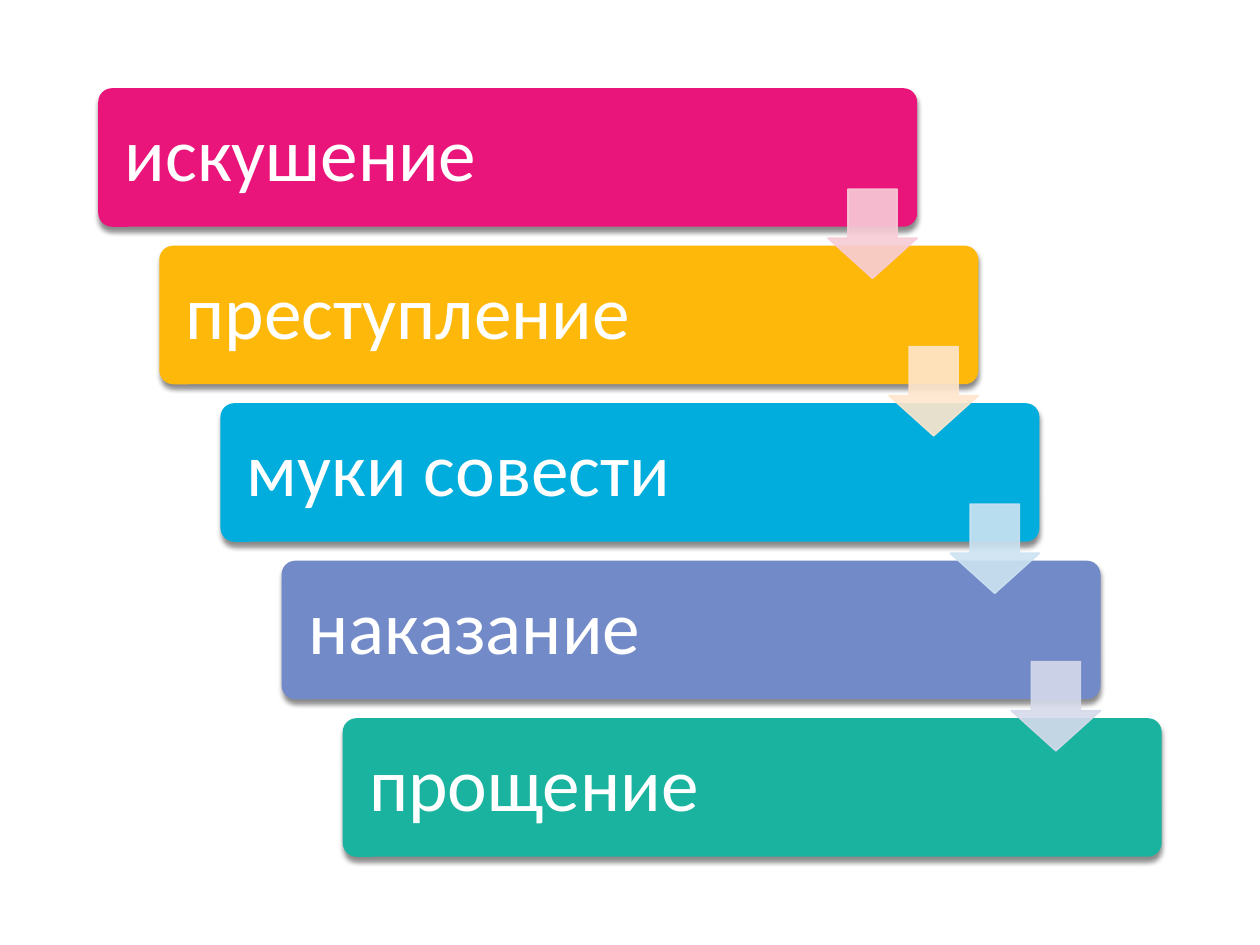
"""Build a slide with five descending steps joined by arrows."""
from lxml import etree
from pptx import Presentation
from pptx.dml.color import RGBColor
from pptx.enum.shapes import MSO_SHAPE
from pptx.enum.text import MSO_ANCHOR, PP_ALIGN
from pptx.oxml.ns import qn
from pptx.util import Inches, Pt

BAR = MSO_SHAPE.ROUNDED_RECTANGLE
ARROW = MSO_SHAPE.DOWN_ARROW
MIDDLE = MSO_ANCHOR.MIDDLE
LEFT = PP_ALIGN.LEFT

COLORS = {
    "pink": "EA157A", "amber": "FEB80A", "cyan": "00ADDC",
    "violet": "738AC8", "teal": "1AB39F",
    "pale pink": "F7CCD7", "pale amber": "FFE6CC",
    "pale cyan": "CCE3F2", "pale violet": "D5DAEB",
    "text": "FFFFFF", "shadow": "000000",
}
STEPS = [
    ("искушение", "pink"),
    ("преступление", "amber"),
    ("муки совести", "cyan"),
    ("наказание", "violet"),
    ("прощение", "teal"),
]
ARROWS = ["pale pink", "pale amber", "pale cyan", "pale violet"]
STEP_X, STEP_Y = 0.485, 1.25
BAR_LEFT, BAR_TOP, BAR_WIDTH, BAR_HEIGHT = 0.78, 0.7, 6.5, 1.1
ARROW_LEFT, ARROW_TOP, ARROW_SIZE = 6.57, 1.5, 0.71
INSET = 0.03
FRAME_FORMAT = {
    "word_wrap": True, "vertical_anchor": MIDDLE,
    "margin_left": Inches(0.18), "margin_right": Inches(0.18),
    "margin_top": Inches(0.18), "margin_bottom": Inches(0.18),
}
PARAGRAPH_FORMAT = {"alignment": LEFT, "line_spacing": 0.9}
FONT_FORMAT = {"name": "Calibri", "size": Pt(43)}


def apply_format(target, values):
    """Set each named attribute on the target."""
    for name, value in values.items():
        setattr(target, name, value)


def color(name):
    """Return the named colour."""
    return RGBColor.from_string(COLORS[name])


def add_alpha(parent, percent):
    """Set the opacity of the colour inside an XML element."""
    for element in parent.iter(qn("a:srgbClr")):
        etree.SubElement(element, qn("a:alpha"), val=str(percent * 1000))


def add_filled_shape(slide, kind, box, fill, adjustments):
    """Add a preset shape with a solid fill and no shadow."""
    shape = slide.shapes.add_shape(kind, *map(Inches, box))
    shape.shadow.inherit = False
    shape.fill.solid()
    shape.fill.fore_color.rgb = color(fill)
    for index, value in enumerate(adjustments):
        shape.adjustments[index] = value
    return shape


def add_shadow(shape):
    """Add a soft shadow below the shape."""
    effects = shape.element.spPr.find(qn("a:effectLst"))
    shadow = etree.SubElement(
        effects, qn("a:outerShdw"), blurRad=str(Pt(3)), dist=str(Pt(2.4)),
        dir="5400000", rotWithShape="0")
    etree.SubElement(shadow, qn("a:srgbClr"), val=COLORS["shadow"])
    add_alpha(shadow, 45)


def add_label(slide, box, text):
    """Add the text of a step."""
    frame = slide.shapes.add_textbox(*map(Inches, box)).text_frame
    apply_format(frame, FRAME_FORMAT)
    paragraph = frame.paragraphs[0]
    apply_format(paragraph, PARAGRAPH_FORMAT)
    run = paragraph.add_run()
    run.text = text
    apply_format(run.font, FONT_FORMAT)
    run.font.color.rgb = color("text")


def add_step(slide, index, text, fill):
    """Add one bar of the staircase with its label."""
    left, top = BAR_LEFT + index * STEP_X, BAR_TOP + index * STEP_Y
    bar = add_filled_shape(
        slide, BAR, (left, top, BAR_WIDTH, BAR_HEIGHT), fill, [0.1])
    bar.line.fill.background()
    add_shadow(bar)
    label_box = (left + INSET, top + INSET, 5.23, BAR_HEIGHT - 2 * INSET)
    add_label(slide, label_box, text)


def add_step_arrow(slide, index, fill):
    """Add the translucent arrow that leads to the next step."""
    box = (ARROW_LEFT + index * STEP_X, ARROW_TOP + index * STEP_Y,
           ARROW_SIZE, ARROW_SIZE)
    arrow = add_filled_shape(slide, ARROW, box, fill, [0.55, 0.45])
    arrow.line.color.rgb = color(fill)
    arrow.line.width = Pt(0.79)
    add_alpha(arrow.element.spPr, 90)


def main():
    """Build and save the presentation."""
    presentation = Presentation()
    presentation.slide_width = Inches(10)
    presentation.slide_height = Inches(7.5)
    slide = presentation.slides.add_slide(presentation.slide_layouts[6])
    for index, (text, fill) in enumerate(STEPS):
        add_step(slide, index, text, fill)
    for index, fill in enumerate(ARROWS):
        add_step_arrow(slide, index, fill)
    presentation.save("out.pptx")


if __name__ == "__main__":
    main()
